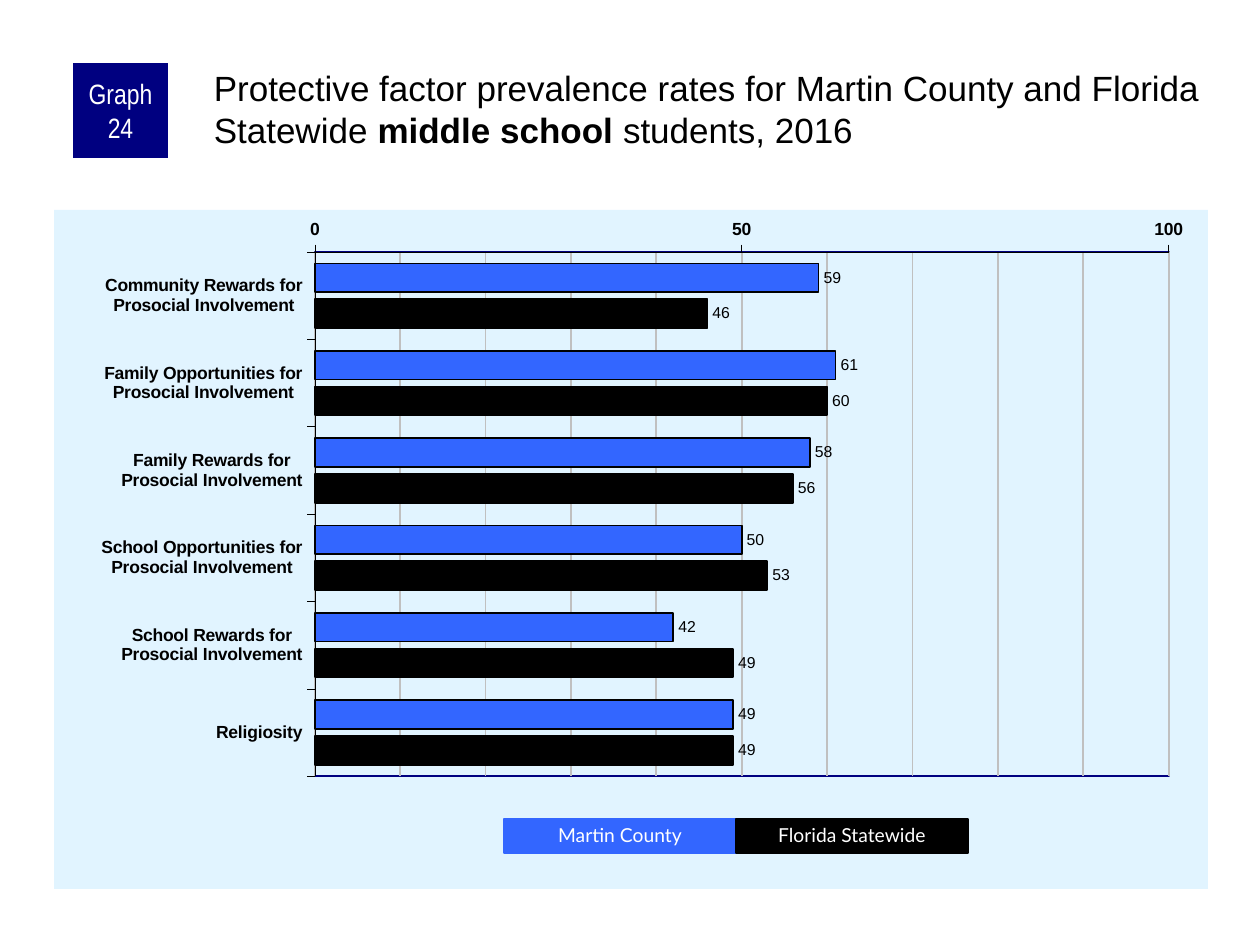
from lxml import etree
from pptx import Presentation, util as u
from pptx.chart.data import CategoryChartData
from pptx.dml.color import RGBColor
from pptx.enum import chart as ch, shapes, text

PX = 914400 // 126
BLUE, BLACK, NAVY, WHITE = "3366FF", "000000", "000080", "FFFFFF"
PALE, GREY = "E1F4FF", "C0C0C0"

TITLE = [
    ("Protective factor prevalence rates for Martin County and Florida Statewide ", False),
    ("middle school ", True),
    ("students, 2016", False),
]
GROUPS = [("Martin County", BLUE), ("Florida Statewide", BLACK)]
RATES = [
    ("Community Rewards for\nProsocial Involvement", 59, 46),
    ("Family Opportunities for\nProsocial Involvement", 61, 60),
    ("Family Rewards for\nProsocial Involvement", 58, 56),
    ("School Opportunities for\nProsocial Involvement", 50, 53),
    ("School Rewards for\nProsocial Involvement", 42, 49),
    ("Religiosity", 49, 49),
]
CHART = (54, 210, 1154, 679)
PLOT = {"x": 0.226, "y": 0.062, "w": 0.74, "h": 0.772}
BADGE = (73, 63, 95, 95)
HEAD = (210, 63, 998, 105)
KEY = (504, 819, 232, 34)


def rgb(hue):
    return RGBColor.from_string(hue)


def emu(box):
    return [u.Emu(n * PX) for n in box]


def style(font, size, hue=BLACK, face="Arial", bold=False):
    font.size, font.name, font.bold = u.Pt(size), face, bold
    font.color.rgb = rgb(hue)


def stroke(line, hue, width):
    line.color.rgb = rgb(hue)
    line.width = u.Pt(width)


def write(shape, runs, size, hue=BLACK, face="Arial", align="LEFT",
          anchor="MIDDLE", inset=(0.1, 0.05, 0.1, 0.05), space=1.0):
    frame = shape.text_frame
    frame.word_wrap = True
    frame.auto_size = text.MSO_AUTO_SIZE.NONE
    frame.vertical_anchor = getattr(text.MSO_ANCHOR, anchor)
    (frame.margin_left, frame.margin_top,
     frame.margin_right, frame.margin_bottom) = [u.Inches(n) for n in inset]
    para = frame.paragraphs[0]
    para.alignment = getattr(text.PP_ALIGN, align)
    para.line_spacing = space
    for words, bold in runs:
        run = para.add_run()
        run.text = words
        style(run.font, size, hue, face, bold)


def block(slide, box, hue, edge=None):
    shape = slide.shapes.add_shape(shapes.MSO_SHAPE.RECTANGLE, *emu(box))
    shape.shadow.inherit = False
    shape.fill.solid()
    shape.fill.fore_color.rgb = rgb(hue)
    if edge:
        stroke(shape.line, edge, 0.75)
    else:
        shape.line.fill.background()
    return shape


def node(tag, body):
    """Parse one chart element with the c and a namespaces declared."""
    base = "http://schemas.openxmlformats.org/drawingml/2006/"
    return etree.fromstring(
        f'<c:{tag} xmlns:c="{base}chart" xmlns:a="{base}main">{body}</c:{tag}>')


def paint(hue):
    return f'<a:solidFill><a:srgbClr val="{hue}"/></a:solidFill>'


def edge_xml(hue):
    return f'<a:ln w="12700">{paint(hue)}</a:ln>'


def frame_plot(chart):
    """Fill the chart area, then place and outline the plot area."""
    root = chart.element.find("{*}chart")
    root.addnext(node("spPr", paint(PALE) + "<a:ln><a:noFill/></a:ln>"))
    area = root.find("{*}plotArea")
    for old in area.findall("{*}layout"):
        area.remove(old)
    modes = '<c:layoutTarget val="inner"/><c:xMode val="edge"/><c:yMode val="edge"/>'
    sides = "".join(f'<c:{key} val="{val}"/>' for key, val in PLOT.items())
    area.insert(0, node("layout", f"<c:manualLayout>{modes}{sides}</c:manualLayout>"))
    area.append(node("spPr", "<a:noFill/>" + edge_xml(NAVY)))


def draw_chart(slide):
    data = CategoryChartData(number_format="0")
    data.categories = [row[0] for row in RATES]
    for i, (name, _) in enumerate(GROUPS, 1):
        data.add_series(name, [row[i] for row in RATES])
    chart = slide.shapes.add_chart(
        ch.XL_CHART_TYPE.BAR_CLUSTERED, *emu(CHART), data).chart
    chart.has_legend = chart.has_title = False
    style(chart.font, 11.8)
    frame_plot(chart)

    plot = chart.plots[0]
    plot.gap_width, plot.overlap = 80, -25
    plot.vary_by_categories = False
    for bars, (_, hue) in zip(plot.series, GROUPS):
        bars.format.fill.solid()
        bars.format.fill.fore_color.rgb = rgb(hue)
        stroke(bars.format.line, BLACK, 1)
        bars.invert_if_negative = False
        tags = bars.data_labels
        tags.show_value = True
        tags.position = ch.XL_LABEL_POSITION.OUTSIDE_END
        style(tags.font, 9)

    cats, vals = chart.category_axis, chart.value_axis
    for axis in (cats, vals):
        style(axis.tick_labels.font, 10, bold=True)
        stroke(axis.format.line, BLACK, 0.25)
        axis.major_tick_mark = ch.XL_TICK_MARK.OUTSIDE
        axis.minor_tick_mark = ch.XL_TICK_MARK.NONE
    cats.reverse_order = True
    cats.crosses = ch.XL_AXIS_CROSSES.MAXIMUM
    vals.minimum_scale, vals.maximum_scale = 0, 100
    vals.major_unit, vals.minor_unit = 50, 10
    vals.has_major_gridlines = vals.has_minor_gridlines = True
    stroke(vals.major_gridlines.format.line, GREY, 1)
    minor = chart.element.find(".//{*}minorGridlines")
    minor.append(node("spPr", edge_xml(GREY)))


def main():
    deck = Presentation()
    deck.slide_width, deck.slide_height = u.Inches(10), u.Inches(7.5)
    slide = deck.slides.add_slide(deck.slide_layouts[5])

    draw_chart(slide)
    write(block(slide, BADGE, NAVY), [("Graph 24", False)], 16, WHITE,
          "Arial Narrow", "CENTER", inset=(0.05, 0, 0.05, 0))
    title = slide.shapes.title
    title.left, title.top, title.width, title.height = emu(HEAD)
    write(title, TITLE, 20, anchor="TOP", inset=(0.03, 0.03, 0, 0))

    left, top, wide, high = KEY
    for i, (name, hue) in enumerate(GROUPS):
        box = (left + i * wide, top, wide, high)
        write(block(slide, box, hue, hue), [(name, False)], 11, WHITE, "Lato",
              "CENTER", space=0.9)
    deck.save("out.pptx")


if __name__ == "__main__":
    main()
